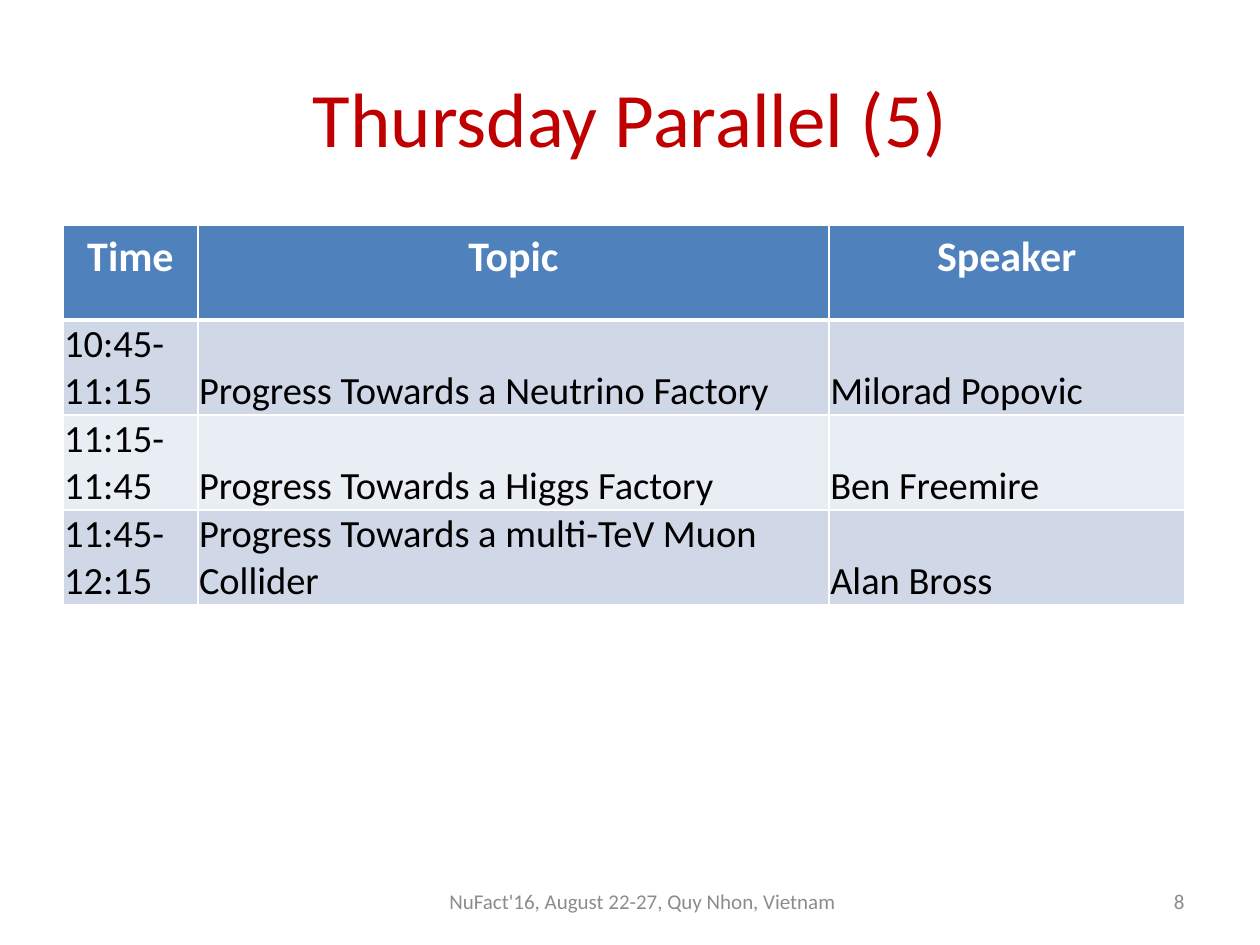
from lxml.etree import SubElement
from pptx import Presentation
from pptx.dml.color import RGBColor
from pptx.enum.text import MSO_ANCHOR as Anchor, PP_ALIGN as Align
from pptx.oxml.ns import qn
from pptx.util import Inches, Pt

FONT = "Calibri"
RED = RGBColor(0xC0, 0x00, 0x00)
BLUE = RGBColor(0x4F, 0x81, 0xBD)
BANDS = RGBColor(0xD0, 0xD8, 0xE8), RGBColor(0xE9, 0xED, 0xF4)
WHITE = RGBColor(0xFF, 0xFF, 0xFF)
BLACK = RGBColor(0x00, 0x00, 0x00)
GRAY = RGBColor(0x8C, 0x8C, 0x8C)

COLUMN_WIDTHS = 1.07, 5.01, 2.82
ROW_HEIGHT = 0.75
HEADERS = "Time", "Topic", "Speaker"
TALKS = (
    ("10:45-11:15", "Progress Towards a Neutrino Factory", "Milorad Popovic"),
    ("11:15-11:45", "Progress Towards a Higgs Factory", "Ben Freemire"),
    ("11:45-12:15", "Progress Towards a multi-TeV Muon Collider", "Alan Bross"),
)


def write(text_frame, text, size, color, align=Align.LEFT, bold=False):
    """Put one formatted paragraph in a text frame."""
    text_frame.text = text
    paragraph = text_frame.paragraphs[0]
    paragraph.alignment = align
    font = paragraph.runs[0].font
    font.name, font.size, font.bold = FONT, Pt(size), bold
    font.color.rgb = color


def set_borders(cell, top, bottom):
    """Draw white cell borders with the given top and bottom widths in points."""
    properties = cell._tc.get_or_add_tcPr()
    sides = ("a:lnL", 1), ("a:lnR", 1), ("a:lnT", top), ("a:lnB", bottom)
    for position, (tag, width) in enumerate(sides):
        line = properties.makeelement(qn(tag), {"w": str(Pt(width))})
        fill = SubElement(line, qn("a:solidFill"))
        SubElement(fill, qn("a:srgbClr"), val=str(WHITE))
        properties.insert(position, line)


def add_title(slide, text, left, top, width, height):
    """Place the slide title in its placeholder."""
    title = slide.shapes.title
    title.left, title.top = Inches(left), Inches(top)
    title.width, title.height = Inches(width), Inches(height)
    title.text_frame.vertical_anchor = Anchor.MIDDLE
    write(title.text_frame, text, 44, RED, Align.CENTER)


def add_schedule(slide, left, top):
    """Build the timetable with a header row and banded talk rows."""
    rows = (HEADERS, *TALKS)
    table = slide.shapes.add_table(
        len(rows), len(HEADERS), Inches(left), Inches(top),
        Inches(sum(COLUMN_WIDTHS)), Inches(ROW_HEIGHT * len(rows))).table
    for column, width in zip(table.columns, COLUMN_WIDTHS):
        column.width = Inches(width)
    for row_index, texts in enumerate(rows):
        table.rows[row_index].height = Inches(ROW_HEIGHT)
        for column_index, text in enumerate(texts):
            cell = table.cell(row_index, column_index)
            cell.fill.solid()
            if row_index == 0:
                cell.fill.fore_color.rgb = BLUE
                write(cell.text_frame, text, 24, WHITE, Align.CENTER, True)
            else:
                cell.fill.fore_color.rgb = BANDS[(row_index - 1) % 2]
                write(cell.text_frame, text, 22, BLACK)
                cell.vertical_anchor = Anchor.BOTTOM
                cell.margin_left = cell.margin_right = cell.margin_top = Inches(0.01)
                cell.margin_bottom = 0
            set_borders(cell, 3 if row_index == 1 else 1, 3 if row_index == 0 else 1)


def add_footer(slide, text, align, left, top, width, height):
    """Place one small gray text in the footer band."""
    box = slide.shapes.add_textbox(
        Inches(left), Inches(top), Inches(width), Inches(height))
    box.text_frame.word_wrap = True
    box.text_frame.vertical_anchor = Anchor.MIDDLE
    write(box.text_frame, text, 12, GRAY, align)


def main():
    """Build and save the session slide."""
    presentation = Presentation()
    presentation.slide_width, presentation.slide_height = Inches(10), Inches(7.5)
    slide = presentation.slides.add_slide(presentation.slide_layouts[5])
    add_title(slide, "Thursday Parallel (5)", 0.5, 0.3, 9, 1.25)
    add_schedule(slide, 0.5, 1.79)
    add_footer(slide, "NuFact'16, August 22-27, Quy Nhon, Vietnam", Align.CENTER,
               3.42, 6.95, 3.36, 0.4)
    add_footer(slide, "8", Align.RIGHT, 7.17, 6.95, 2.33, 0.4)
    presentation.save("out.pptx")


if __name__ == "__main__":
    main()
